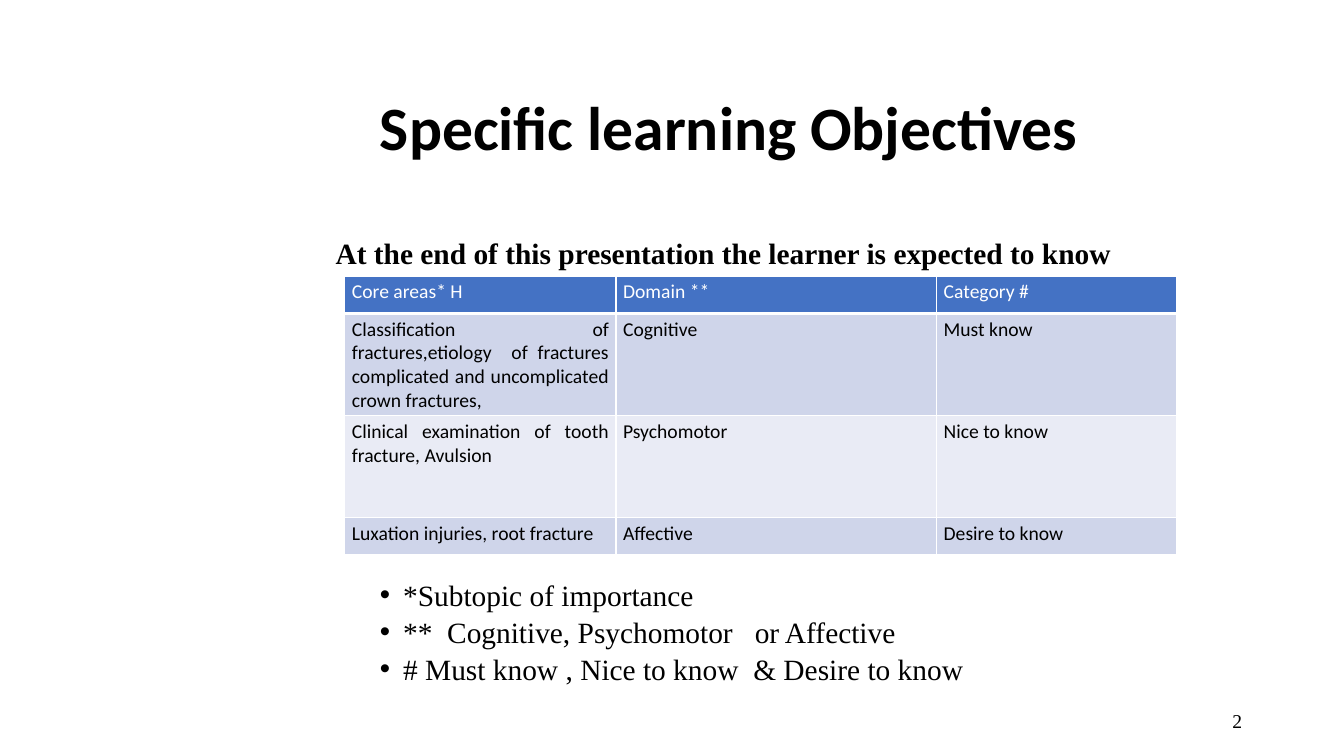
from lxml.etree import SubElement
from pptx import Presentation
from pptx.dml.color import RGBColor
from pptx.enum.text import MSO_ANCHOR as Anchor, PP_ALIGN as Align
from pptx.oxml.ns import qn
from pptx.util import Pt

PX = 9144  # EMU; 100 px to the inch
BLACK = RGBColor(0x00, 0x00, 0x00)
WHITE = RGBColor(0xFF, 0xFF, 0xFF)
HEADER_BLUE = RGBColor(0x44, 0x72, 0xC4)
BAND_DARK = RGBColor(0xCF, 0xD5, 0xEA)
BAND_LIGHT = RGBColor(0xE9, 0xEB, 0xF5)
SANS, SERIF = "Calibri", "Times New Roman"

COLUMN_WIDTHS = (269, 318, 238)
ROW_HEIGHTS = (37, 101, 101, 37)
OBJECTIVES = (
    ("Core areas* H", "Domain **", "Category #"),
    ("Classification of fractures,etiology  of fractures complicated "
     "and uncomplicated crown fractures,", "Cognitive", "Must know"),
    ("Clinical examination of tooth fracture, Avulsion",
     "Psychomotor", "Nice to know"),
    ("Luxation injuries, root fracture", "Affective", "Desire to know"),
)
FOOTNOTES = (
    "*Subtopic of importance",
    "**  Cognitive, Psychomotor   or Affective",
    "# Must know , Nice to know  & Desire to know",
)


def style_text(para, size, font, color=BLACK, bold=False):
    for span in para.runs:
        span.font.size = Pt(size)
        span.font.name = font
        span.font.bold = bold
        span.font.color.rgb = color


def add_bullet(para, indent):
    properties = para._p.get_or_add_pPr()
    properties.set("marL", str(indent * PX))
    properties.set("indent", str(-indent * PX))
    SubElement(properties, qn("a:buFont"), typeface="Arial")
    SubElement(properties, qn("a:buChar"), char="•")


def add_text(page, area, lines, size, font, bold=False, spacing=1.0,
             align=Align.LEFT, anchor=Anchor.TOP, bulleted=False):
    box = page.shapes.add_textbox(*(length * PX for length in area))
    frame = box.text_frame
    frame.word_wrap = True
    frame.vertical_anchor = anchor
    frame.text = "\n".join(lines)
    for para in frame.paragraphs:
        para.alignment = align
        para.line_spacing = spacing
        if bulleted:
            add_bullet(para, 23)
        style_text(para, size, font, bold=bold)


def set_borders(cell, bottom):
    """Draw white cell borders, 1 pt except for the given bottom width."""
    properties = cell._tc.get_or_add_tcPr()
    widths = {"a:lnL": 1, "a:lnR": 1, "a:lnT": 1, "a:lnB": bottom}
    for place, (tag, width) in enumerate(widths.items()):
        line = SubElement(properties, qn(tag), w=str(Pt(width)))
        fill = SubElement(line, qn("a:solidFill"))
        SubElement(fill, qn("a:srgbClr"), val=str(WHITE))
        properties.insert(place, line)  # borders come before the cell fill


def fill_cell(cell, text, fill, color, bottom):
    cell.margin_left = cell.margin_right = 7 * PX
    cell.margin_top = cell.margin_bottom = 4 * PX
    cell.fill.solid()
    cell.fill.fore_color.rgb = fill
    set_borders(cell, bottom)
    cell.text = text
    para = cell.text_frame.paragraphs[0]
    para.alignment = Align.JUSTIFY
    style_text(para, 14, SANS, color)


def add_objectives_table(page, left, top):
    frame = page.shapes.add_table(
        len(ROW_HEIGHTS), len(COLUMN_WIDTHS), left * PX, top * PX,
        sum(COLUMN_WIDTHS) * PX, sum(ROW_HEIGHTS) * PX)
    table = frame.table
    for column, width in zip(table.columns, COLUMN_WIDTHS):
        column.width = width * PX
    for index, (row, height) in enumerate(zip(table.rows, ROW_HEIGHTS)):
        row.height = height * PX
        if index == 0:
            look = (HEADER_BLUE, WHITE, 3)
        else:
            look = (BAND_DARK if index % 2 else BAND_LIGHT, BLACK, 1)
        for cell, text in zip(row.cells, OBJECTIVES[index]):
            fill_cell(cell, text, *look)


def main():
    deck = Presentation()
    deck.slide_width, deck.slide_height = 1333 * PX, 750 * PX
    page = deck.slides.add_slide(deck.slide_layouts[6])
    add_text(page, (367, 85, 760, 90), ["Specific learning Objectives"],
             44, SANS, bold=True, spacing=0.9, anchor=Anchor.MIDDLE)
    add_objectives_table(page, 342, 274)
    add_text(page, (367, 566, 680, 116), FOOTNOTES, 21, SERIF,
             spacing=1.05, bulleted=True)
    add_text(page, (323, 227, 804, 45),
             ["At the end of this presentation the learner is expected to know"],
             21, SERIF, bold=True, spacing=1.05)
    add_text(page, (942, 695, 300, 40), ["2"], 14, SERIF,
             align=Align.RIGHT, anchor=Anchor.MIDDLE)
    deck.save("out.pptx")


if __name__ == "__main__":
    main()
